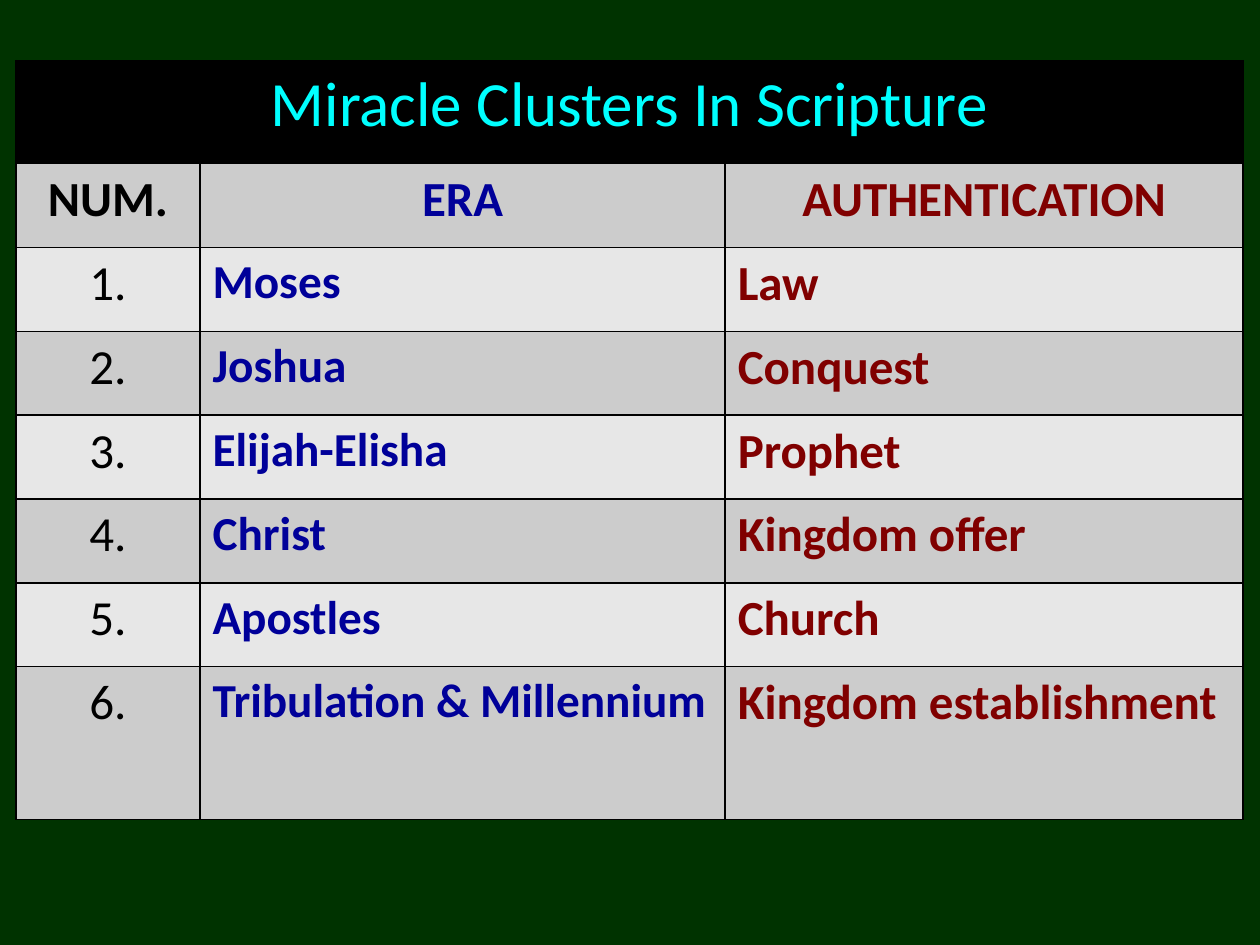
from lxml.etree import SubElement
from pptx import Presentation
from pptx.dml.color import RGBColor
from pptx.enum.text import PP_ALIGN
from pptx.oxml.ns import qn
from pptx.util import Cm, Pt

COLORS = {
    "background": "003300",
    "banner": "000000",
    "title": "00FFFF",
    "border": "000000",
    "dark_band": "CCCCCC",
    "light_band": "E7E7E7",
    "number": "000000",
    "era": "000099",
    "authentication": "800000",
}
TITLE = "Miracle Clusters In Scripture"
HEADINGS = ("NUM.", "ERA", "AUTHENTICATION")
CLUSTERS = [
    ("Moses", "Law"),
    ("Joshua", "Conquest"),
    ("Elijah-Elisha", "Prophet"),
    ("Christ", "Kingdom offer"),
    ("Apostles", "Church"),
    ("Tribulation & Millennium", "Kingdom establishment"),
]
COLUMN_KEYS = ("number", "era", "authentication")
COLUMN_SIZES = (28, 27, 28)
COLUMN_SHARES = (0.15, 0.428, 0.422)
BANNER_HEIGHT = Cm(2.08)
ROW_HEIGHT = Cm(1.69)


def rgb(key):
    return RGBColor.from_string(COLORS[key])


def add_borders(cell):
    properties = cell._tc.get_or_add_tcPr()
    for side in ("lnL", "lnR", "lnT", "lnB"):
        line = SubElement(properties, qn(f"a:{side}"), w=str(Pt(1)))
        fill = SubElement(line, qn("a:solidFill"))
        SubElement(fill, qn("a:srgbClr"), val=COLORS["border"])


def style_cell(cell, text, fill, color, size, bold, centered):
    add_borders(cell)
    cell.fill.solid()
    cell.fill.fore_color.rgb = rgb(fill)
    cell.text = text
    paragraph = cell.text_frame.paragraphs[0]
    paragraph.alignment = PP_ALIGN.CENTER if centered else PP_ALIGN.LEFT
    paragraph.font.name = "Calibri"
    paragraph.font.size = Pt(size)
    paragraph.font.bold = bold
    paragraph.font.color.rgb = rgb(color)


def add_cluster_table(slide, left, top, width, height):
    rows = [HEADINGS]
    rows += [(f"{number}.", *cluster) for number, cluster in enumerate(CLUSTERS, 1)]
    table = slide.shapes.add_table(
        len(rows) + 1, len(HEADINGS), left, top, width, height
    ).table

    for column, share in zip(table.columns, COLUMN_SHARES):
        column.width = int(width * share)
    heights = [BANNER_HEIGHT] + [ROW_HEIGHT] * (len(rows) - 1)
    heights.append(height - sum(heights))
    for row, row_height in zip(table.rows, heights):
        row.height = row_height

    banner = table.cell(0, 0)
    banner.merge(table.cell(0, len(HEADINGS) - 1))
    style_cell(banner, TITLE, "banner", "title", 36, False, True)

    for r, texts in enumerate(rows):
        band = "light_band" if r % 2 else "dark_band"
        for c, text in enumerate(texts):
            heading, numbering = r == 0, c == 0
            size = 28 if heading else COLUMN_SIZES[c]
            style_cell(
                table.cell(r + 1, c), text, band, COLUMN_KEYS[c], size,
                heading or not numbering, heading or numbering,
            )


def main():
    presentation = Presentation()
    presentation.slide_width = Cm(25.4)
    presentation.slide_height = Cm(19.05)
    slide = presentation.slides.add_slide(presentation.slide_layouts[6])
    slide.background.fill.solid()
    slide.background.fill.fore_color.rgb = rgb("background")
    add_cluster_table(slide, Cm(0.32), Cm(1.22), Cm(24.74), Cm(15.3))
    presentation.save("out.pptx")


if __name__ == "__main__":
    main()
